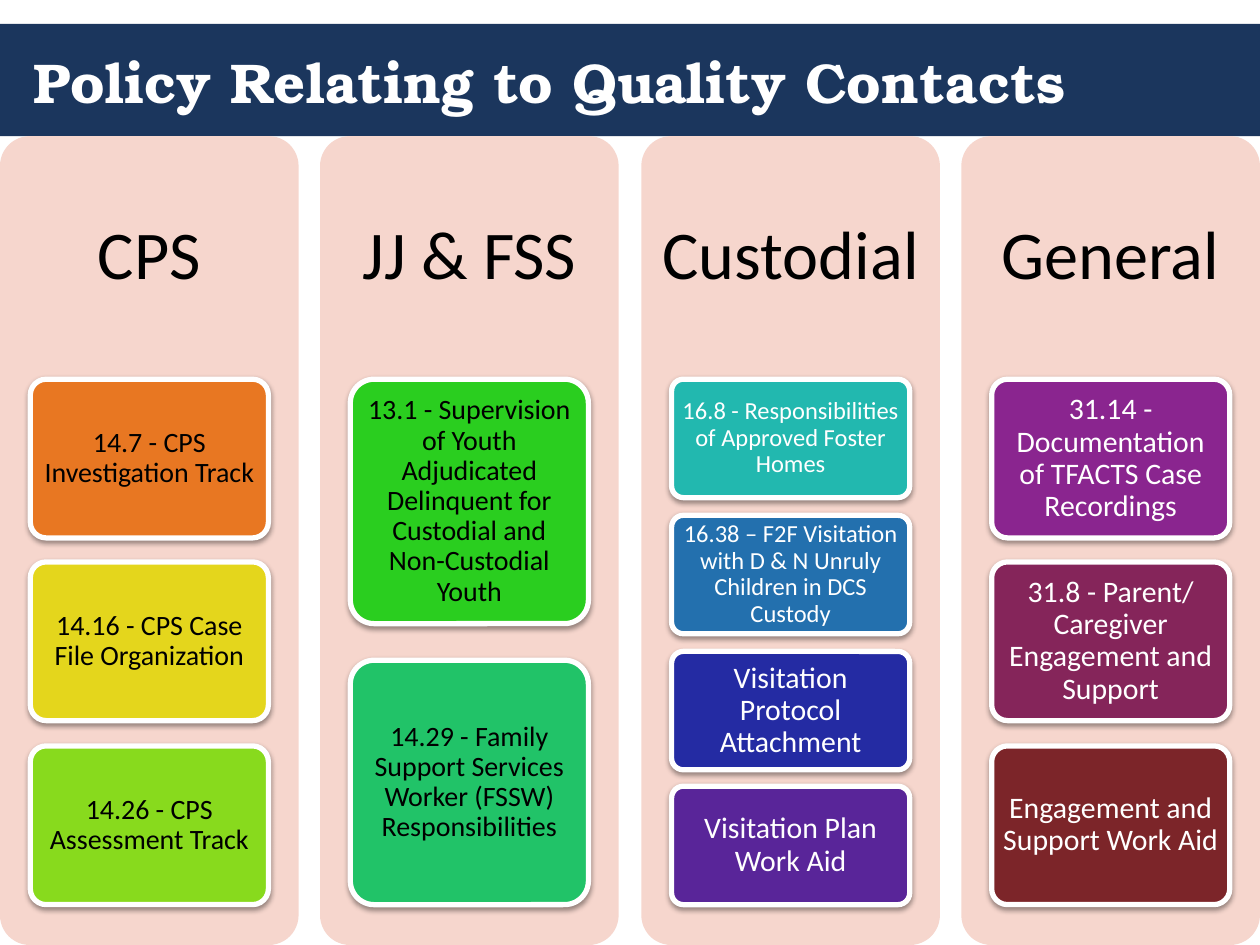
"""Build the slide of policies that relate to quality contacts."""
from dataclasses import dataclass

from lxml import etree
from pptx import Presentation
from pptx.dml.color import RGBColor
from pptx.enum.shapes import MSO_SHAPE as Preset
from pptx.enum.text import MSO_ANCHOR as Anchor, PP_ALIGN as Align
from pptx.oxml.ns import qn
from pptx.slide import Slide
from pptx.util import Emu, Pt

NAVY = RGBColor(0x1B, 0x36, 0x5D)
PINK = RGBColor(0xF6, 0xD6, 0xCD)
WHITE = RGBColor(0xFF, 0xFF, 0xFF)
BLACK = RGBColor(0x00, 0x00, 0x00)
ORANGE = RGBColor(0xE8, 0x77, 0x22)
YELLOW = RGBColor(0xE4, 0xD6, 0x1C)
LIME = RGBColor(0x88, 0xDA, 0x1D)
GREEN = RGBColor(0x2A, 0xCE, 0x1F)
EMERALD = RGBColor(0x21, 0xC3, 0x68)
TEAL = RGBColor(0x22, 0xB8, 0xAF)
BLUE = RGBColor(0x23, 0x70, 0xAE)
INDIGO = RGBColor(0x24, 0x2B, 0xA3)
VIOLET = RGBColor(0x59, 0x25, 0x99)
PURPLE = RGBColor(0x8A, 0x25, 0x8F)
PLUM = RGBColor(0x85, 0x25, 0x5A)
MAROON = RGBColor(0x7C, 0x25, 0x29)

EMU_PER_PX = 9144
SLIDE_WIDTH, SLIDE_HEIGHT = 1000, 750
COLUMN_TOP, COLUMN_WIDTH, HEADING_HEIGHT = 108, 237, 193
CARD_TOP, CARD_WIDTH, CARD_AREA, GAP_RATIO = 301, 189, 417, 0.15

COLUMNS = [
    ("CPS", BLACK, [
        ("14.7 - CPS Investigation Track", ORANGE, 16),
        ("14.16 - CPS Case File Organization", YELLOW, 16),
        ("14.26 - CPS Assessment Track", LIME, 16),
    ]),
    ("JJ & FSS", BLACK, [
        ("13.1 - Supervision of Youth Adjudicated Delinquent for "
         "Custodial and Non-Custodial Youth", GREEN, 16),
        ("14.29 - Family Support Services Worker (FSSW) Responsibilities", EMERALD, 16),
    ]),
    ("Custodial", WHITE, [
        ("16.8 - Responsibilities of Approved Foster Homes", TEAL, 14),
        ("16.38 – F2F Visitation with D & N Unruly Children in DCS Custody", BLUE, 14),
        ("Visitation Protocol Attachment", INDIGO, 17),
        ("Visitation Plan Work Aid", VIOLET, 17),
    ]),
    ("General", WHITE, [
        ("31.14 - Documentation of TFACTS Case Recordings", PURPLE, 17),
        ("31.8 - Parent/ Caregiver Engagement and Support", PLUM, 17),
        ("Engagement and Support Work Aid", MAROON, 17),
    ]),
]


def px(*lengths):
    """Turn pixel lengths into EMU."""
    return [Emu(length * EMU_PER_PX) for length in lengths]


@dataclass
class PolicySlide:
    """Hold the style and the current slide."""

    slide: Slide
    body_font: str = "Calibri"
    title_font: str = "TeX Gyre Bonum"

    def panel(self, box, fill, preset=Preset.ROUNDED_RECTANGLE):
        """Add a filled shape without line or shadow."""
        shape = self.slide.shapes.add_shape(preset, *px(*box))
        shape.shadow.inherit = False
        shape.fill.solid()
        shape.fill.fore_color.rgb = fill
        shape.line.fill.background()
        if preset == Preset.ROUNDED_RECTANGLE:
            shape.adjustments[0] = 0.1
        return shape

    def label(self, shape, text, size, color, insets):
        """Put centred body text into a shape."""
        frame = shape.text_frame
        frame.text = text
        frame.word_wrap = True
        frame.vertical_anchor = Anchor.MIDDLE
        horizontal, vertical = px(*insets)
        frame.margin_left = frame.margin_right = horizontal
        frame.margin_top = frame.margin_bottom = vertical
        paragraph = frame.paragraphs[0]
        paragraph.alignment = Align.CENTER
        paragraph.line_spacing = 0.9
        font = paragraph.runs[0].font
        font.name, font.size, font.color.rgb = self.body_font, Pt(size), color
        return paragraph

    def title(self, text):
        """Add the title on its band."""
        self.panel((0, 19, SLIDE_WIDTH, 89), NAVY, Preset.RECTANGLE)
        shape = self.slide.shapes.add_textbox(*px(17, 19, 967, 90))
        paragraph = self.label(shape, text, 32, WHITE, (10, 5))
        paragraph.alignment = Align.LEFT
        paragraph.line_spacing = 1.0
        font = paragraph.runs[0].font
        font.name, font.bold = self.title_font, True

    def heading(self, box, text):
        """Add a column heading."""
        shape = self.slide.shapes.add_textbox(*px(*box))
        self.label(shape, text, 39, BLACK, (16, 16))

    def card(self, box, text, fill, size, color):
        """Add a policy card with a white outline and a soft shadow."""
        shape = self.panel(box, fill)
        shape.line.color.rgb = WHITE
        shape.line.width = Pt(3)
        effects = shape._element.spPr.find(qn("a:effectLst"))
        shadow = etree.SubElement(
            effects, qn("a:outerShdw"), blurRad=str(int(Pt(3.1))),
            dist=str(int(Pt(1.6))), dir="5400000", rotWithShape="0")
        shade = etree.SubElement(shadow, qn("a:srgbClr"), val=str(BLACK))
        etree.SubElement(shade, qn("a:alpha"), val="38000")
        self.label(shape, text, size, color, (5, 4) if size == 17 else (4, 3))

    def column(self, left, name, color, cards):
        """Add a column with its heading and evenly spaced cards."""
        self.panel((left, COLUMN_TOP, COLUMN_WIDTH, SLIDE_HEIGHT - COLUMN_TOP), PINK)
        self.heading((left, COLUMN_TOP, COLUMN_WIDTH, HEADING_HEIGHT), name)
        height = CARD_AREA / (len(cards) + GAP_RATIO * (len(cards) - 1))
        card_left = left + (COLUMN_WIDTH - CARD_WIDTH) // 2
        for row, (text, fill, size) in enumerate(cards):
            top = round(CARD_TOP + row * height * (1 + GAP_RATIO))
            self.card((card_left, top, CARD_WIDTH, round(height)), text, fill, size, color)


def main():
    """Build and save the presentation."""
    presentation = Presentation()
    presentation.slide_width, presentation.slide_height = px(SLIDE_WIDTH, SLIDE_HEIGHT)
    policy_slide = PolicySlide(presentation.slides.add_slide(presentation.slide_layouts[6]))
    policy_slide.title("Policy Relating to Quality Contacts")
    pitch = (SLIDE_WIDTH - COLUMN_WIDTH) / (len(COLUMNS) - 1)
    for index, (name, color, cards) in enumerate(COLUMNS):
        policy_slide.column(round(index * pitch), name, color, cards)
    presentation.save("out.pptx")


if __name__ == "__main__":
    main()
